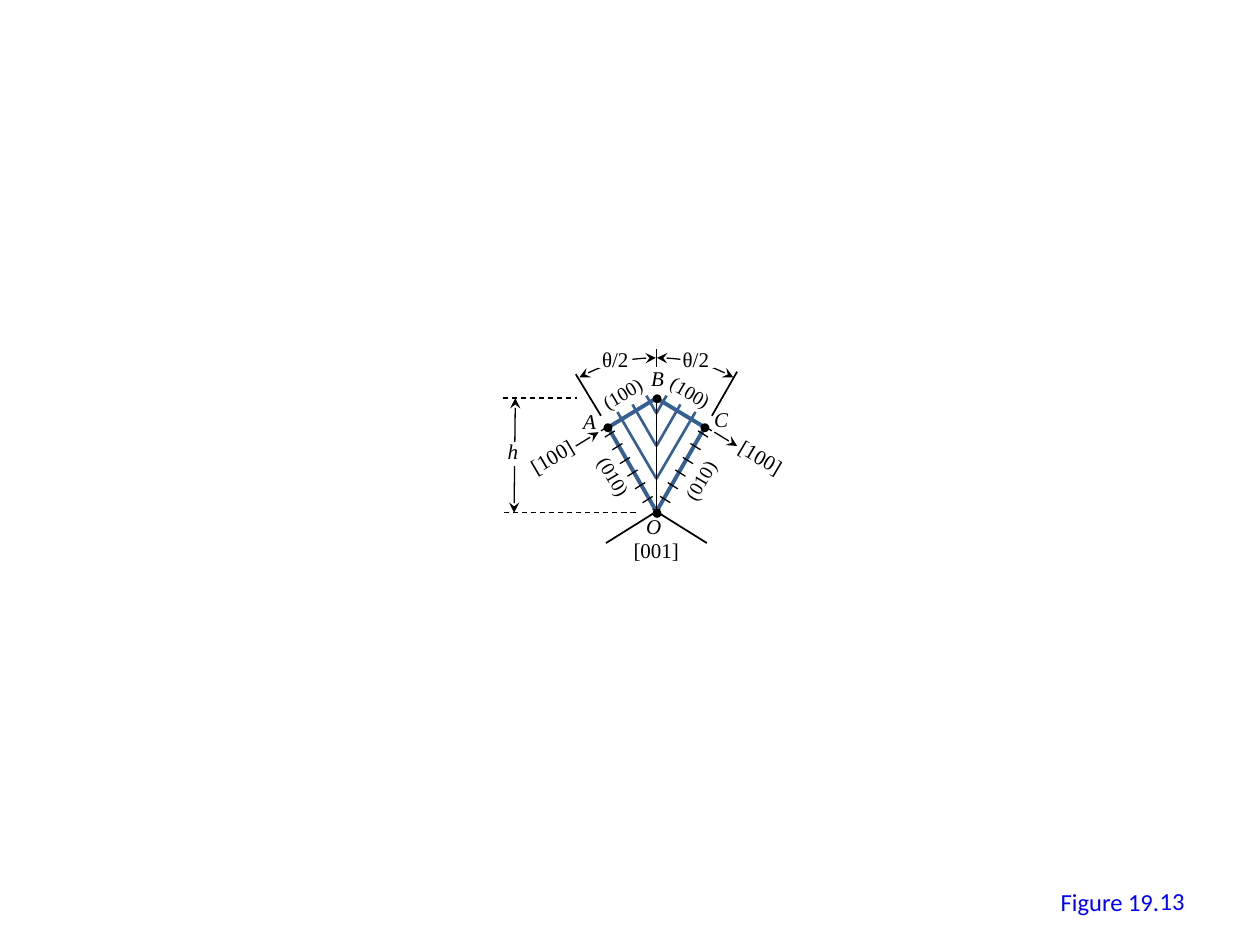
from lxml import etree
from pptx import Presentation
from pptx.dml.color import RGBColor
from pptx.enum.dml import MSO_LINE
from pptx.enum.shapes import MSO_CONNECTOR, MSO_SHAPE
from pptx.enum.text import MSO_ANCHOR, MSO_AUTO_SIZE, PP_ALIGN
from pptx.oxml.ns import qn
from pptx.util import Pt

PX = 9144  # EMU per px, 100 px to the inch
BLACK = RGBColor(0x00, 0x00, 0x00)
WHITE = RGBColor(0xFF, 0xFF, 0xFF)
STEEL = RGBColor(0x37, 0x60, 0x92)
BLUE = RGBColor(0x00, 0x00, 0xFF)
STRAIGHT = MSO_CONNECTOR.STRAIGHT
RECT, OVAL, ARC = MSO_SHAPE.RECTANGLE, MSO_SHAPE.OVAL, MSO_SHAPE.ARC
DASH = MSO_LINE.DASH
LEFT, CENTER, RIGHT = PP_ALIGN.LEFT, PP_ALIGN.CENTER, PP_ALIGN.RIGHT
MIDDLE, TOP = MSO_ANCHOR.MIDDLE, MSO_ANCHOR.TOP
FIT, NO_FIT = MSO_AUTO_SIZE.SHAPE_TO_FIT_TEXT, MSO_AUTO_SIZE.NONE

AXIS = 521  # x of the symmetry axis OB
APEX_Y, BASE_Y = 316, 406


def mirror(x):
    return 2 * AXIS - x


class Figure:
    """Style of the drawing and the slide it goes on."""

    serif, sans = "Times New Roman", "Calibri"

    def __init__(self, slide):
        self.shapes = slide.shapes

    def stroke(self, sp, color, width, ends=()):
        sp.line.color.rgb = color
        sp.line.width = Pt(width)
        for end in ends:
            etree.SubElement(sp.line._get_or_add_ln(), qn(f"a:{end}"), type="stealth")

    def line(self, x1, y1, x2, y2, color=BLACK, width=0.75, dash=None, ends=()):
        sp = self.shapes.add_connector(STRAIGHT, x1 * PX, y1 * PX, x2 * PX, y2 * PX)
        sp.line.dash_style = dash
        self.stroke(sp, color, width, ends)
        etree.SubElement(sp._element.spPr, qn("a:effectLst"))

    def pair(self, x1, y1, x2, y2, color=BLACK, width=0.75):
        """A line and its mirror image across the axis."""
        self.line(x1, y1, x2, y2, color, width)
        self.line(mirror(x1), y1, mirror(x2), y2, color, width)

    def shape(self, kind, x, y, w, h, fill):
        sp = self.shapes.add_shape(kind, x * PX, y * PX, w * PX, h * PX)
        sp.shadow.inherit = False
        sp.fill.solid()
        sp.fill.fore_color.rgb = fill
        sp.line.fill.background()

    def dot(self, x, y):
        self.shape(OVAL, x - 3, y - 3, 7, 7, BLACK)

    def arc(self, x, y, size, flip=False):
        sp = self.shapes.add_shape(ARC, x * PX, y * PX, size * PX, size * PX)
        sp.shadow.inherit = False
        sp.fill.background()
        sp.adjustments[0], sp.adjustments[1] = 162, 179.165
        if flip:
            sp._element.spPr.xfrm.set("flipH", "1")
        self.stroke(sp, BLACK, 0.75, ("headEnd", "tailEnd"))

    def text(self, text, x, y, w, h=30, size=12, italic=False, angle=0,
             align=LEFT, font=serif, color=BLACK, wrap=False, anchor=TOP):
        sp = self.shapes.add_textbox(x * PX, y * PX, w * PX, h * PX)
        sp.rotation = angle
        tf = sp.text_frame
        tf.word_wrap = wrap
        tf.auto_size = NO_FIT if wrap else FIT
        tf.vertical_anchor = anchor
        p = tf.paragraphs[0]
        p.text = text
        p.alignment = align
        r = p.runs[0]
        r.font.size, r.font.name = Pt(size), font
        r.font.italic = italic
        r.font.color.rgb = color

    def plane(self, text, x, y, angle):
        self.text(text, x, y, 54, 29, 11, angle=angle, align=CENTER)


def draw_crystal(fig):
    fig.pair(AXIS, BASE_Y, 560, 338, STEEL, 2.25)
    for y, end_x, end_y in ((380, 552, 327), (354, 540, 321), (328, 529, 314)):
        fig.pair(AXIS, y, end_x, end_y, STEEL, 1.5)
    fig.pair(481, 431, AXIS, BASE_Y, width=1)
    fig.pair(483, 339, AXIS, APEX_Y, STEEL, 2.25)
    fig.line(565, 330, 585, 295, width=1)
    fig.line(477, 330, 457, 297, width=1)
    for x, y in ((AXIS, APEX_Y), (482, 339), (559, 339), (AXIS, 407)):
        fig.dot(x, y)
    ticks = [(524 - 6 * i, round(404 - 10.3 * i)) for i in range(7)] + [(485, 337)]
    for x, y in ticks:
        fig.pair(x, y, x - 8, y + 5)
    fig.line(AXIS, 407, AXIS, APEX_Y, width=1)


def draw_dimensions(fig):
    fig.arc(395, 284, 253)
    fig.arc(394, 284, 253, flip=True)
    fig.line(AXIS, 291, AXIS, 277, width=1)
    for x in (475, 540):
        fig.shape(RECT, x, 283, 27, 9, WHITE)
    fig.line(400, 407, 507, 407, dash=DASH)
    fig.line(399, 316, 458, 316, dash=DASH)
    fig.line(408, 407, 409, 316, ends=("headEnd", "tailEnd"))
    fig.shape(RECT, 397, 351, 21, 19, WHITE)
    fig.line(457, 354, 475, 343, ends=("tailEnd",))
    fig.line(567, 343, 585, 354, ends=("tailEnd",))


def draw_labels(fig):
    for name, x, y, w in (("A", 453, 319, 32), ("C", 557, 318, 34), ("B", 507, 285, 32),
                          ("O", 503, 403, 34), ("h", 393, 343, 30)):
        fig.text(name, x, y, w, italic=True)
    for x, y, angle in ((576, 348, 30.7), (410, 347, 329.4)):
        fig.text("[100]", x, y, 57, angle=angle)
    fig.text("[001]", 493, 422, 57)
    for x in (532, 468):
        fig.text("θ/2", x, 270, 43)
    for name, x, y, angle in (("(100)", 521, 297, 30.6), ("(100)", 467, 298, 329.4),
                              ("(010)", 529, 367, 300.6), ("(010)", 460, 364, 59.4)):
        fig.plane(name, x, y, angle)


def main():
    prs = Presentation()
    prs.slide_width, prs.slide_height = 1000 * PX, 750 * PX
    s = prs.slides.add_slide(prs.slide_layouts[6])
    fig = Figure(s)
    fig.text("Figure 19.", 832, 699, 99, 34, 14, font=fig.sans, color=BLUE)
    draw_crystal(fig)
    draw_dimensions(fig)
    draw_labels(fig)
    fig.text("13", 717, 695, 233, 40, 14, align=RIGHT, font=fig.sans, color=BLUE,
             wrap=True, anchor=MIDDLE)
    prs.save("out.pptx")


if __name__ == "__main__":
    main()
